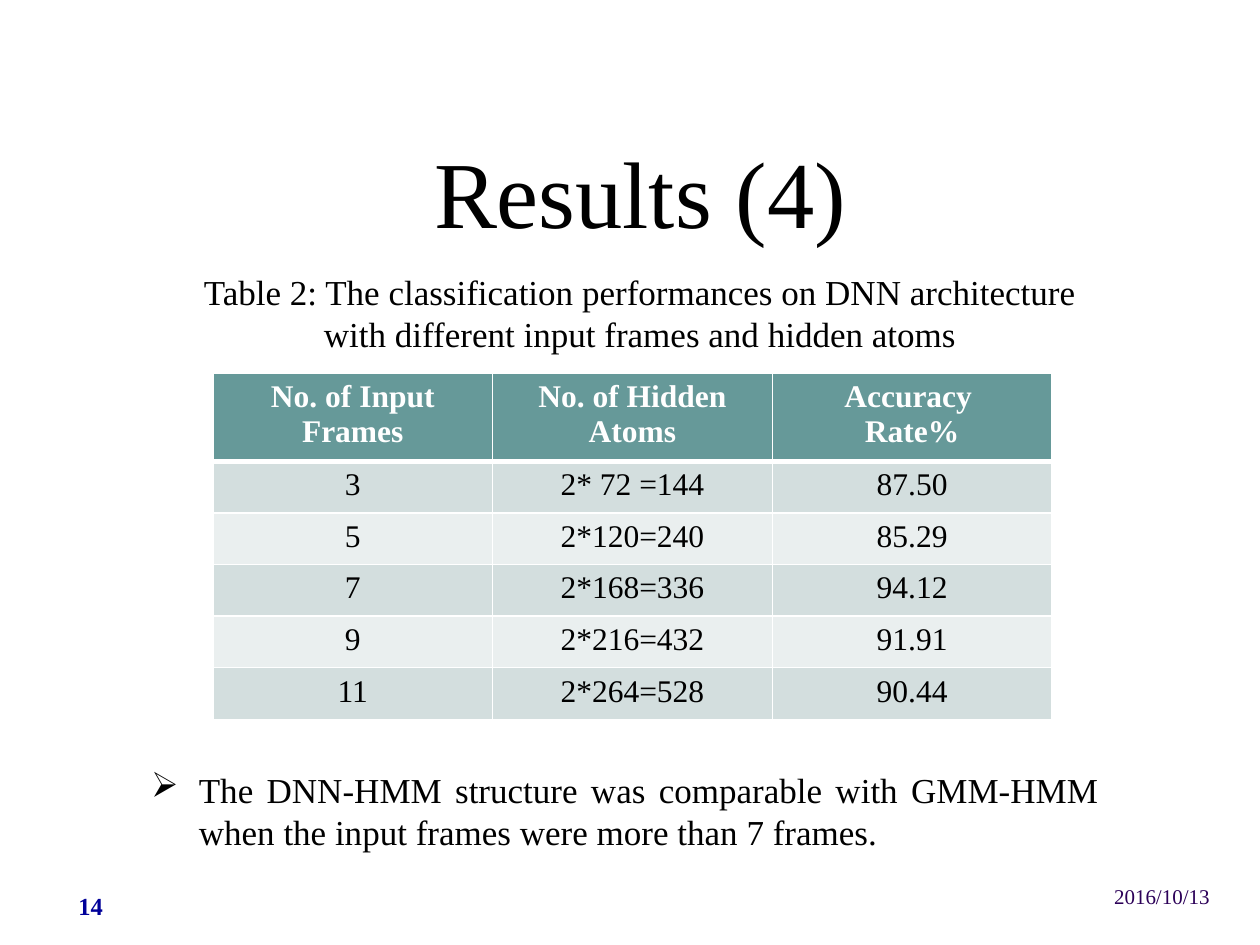
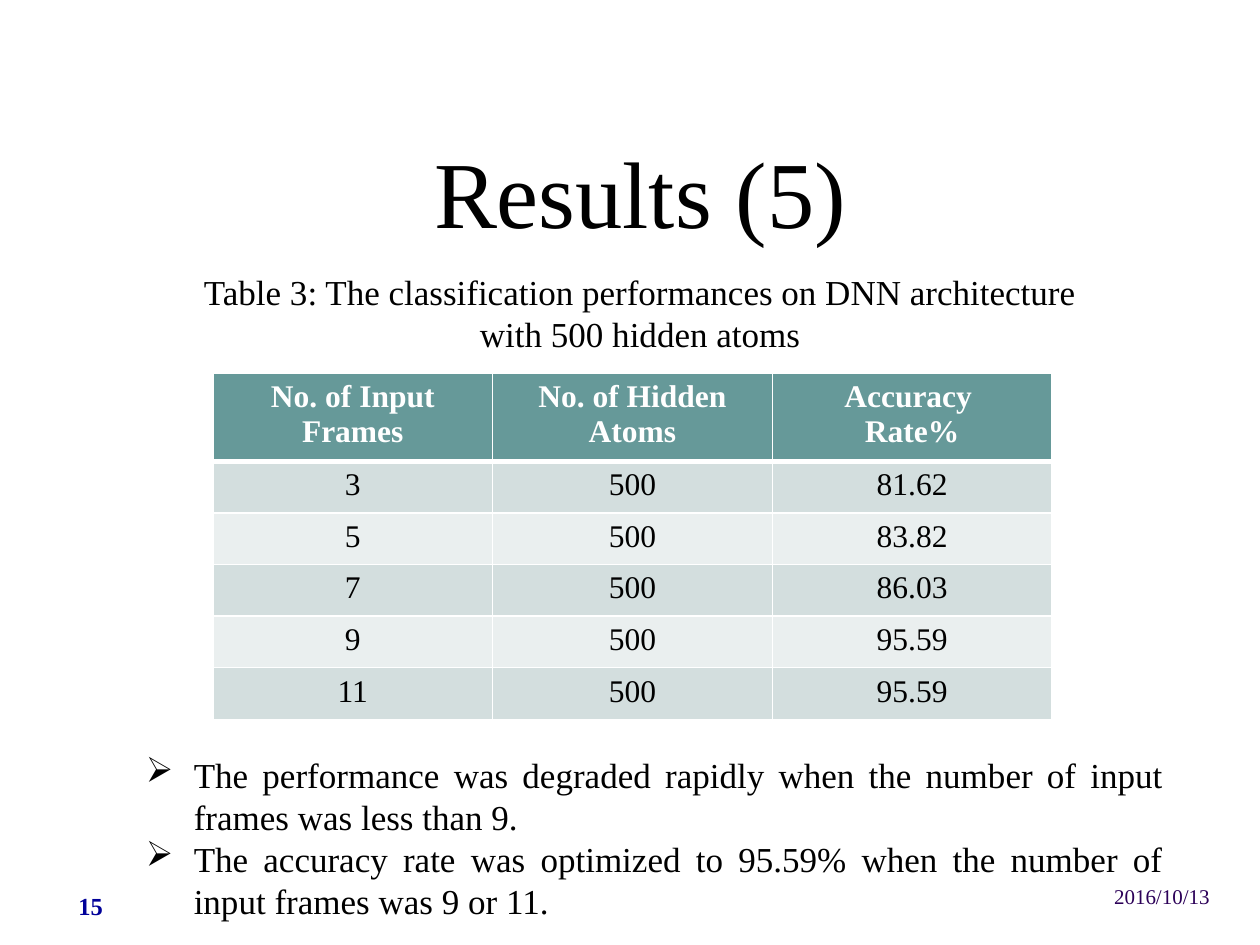
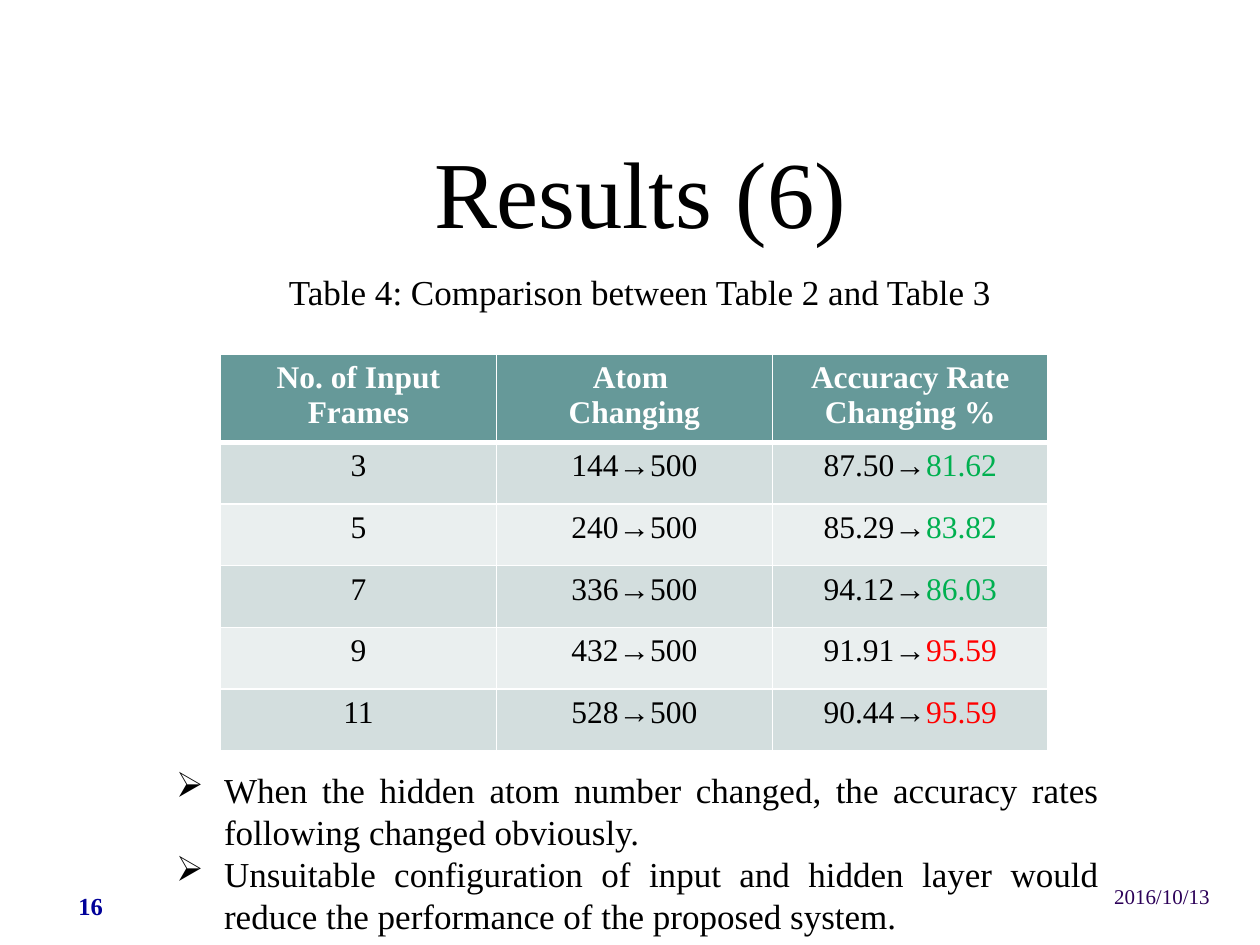
from lxml import etree
from pptx import Presentation
from pptx.dml.color import RGBColor
from pptx.enum.text import MSO_ANCHOR, PP_ALIGN
from pptx.oxml.ns import qn
from pptx.util import Inches, Pt

LEFT, MID, RIGHT = PP_ALIGN.LEFT, PP_ALIGN.CENTER, PP_ALIGN.RIGHT
JUST = PP_ALIGN.JUSTIFY
TOP, CENTER, BOTTOM = MSO_ANCHOR.TOP, MSO_ANCHOR.MIDDLE, MSO_ANCHOR.BOTTOM

FONT = "Times New Roman"
BLACK = RGBColor(0x00, 0x00, 0x00)
WHITE = RGBColor(0xFF, 0xFF, 0xFF)
NAVY = RGBColor(0x00, 0x00, 0x99)
PLUM = RGBColor(0x2C, 0x00, 0x58)
TEAL = RGBColor(0x66, 0x99, 0x99)
BANDS = RGBColor(0xD3, 0xDE, 0xDE), RGBColor(0xEA, 0xEF, 0xEF)
GREEN = RGBColor(0x00, 0xB0, 0x50)
RED = RGBColor(0xFF, 0x00, 0x00)

FRAMES = [3, 5, 7, 9, 11]
ATOMS = [144, 240, 336, 432, 528]
SUMS = ["2* 72 =144", "2*120=240", "2*168=336", "2*216=432", "2*264=528"]
SCALED = ["87.50", "85.29", "94.12", "91.91", "90.44"]
FIXED = ["81.62", "83.82", "86.03", "95.59", "95.59"]


def add_run(para, text, size, color=BLACK, bold=False):
    run = para.add_run()
    run.text = text
    font = run.font
    font.name, font.size, font.bold = FONT, Pt(size), bold
    font.color.rgb = color


def fill_text(frame, lines, size, align, color=BLACK, bold=False):
    for i, line in enumerate(lines):
        para = frame.add_paragraph() if i else frame.paragraphs[0]
        para.alignment = align
        runs = [(line, color)] if isinstance(line, str) else line
        for text, tint in runs:
            add_run(para, text, size, tint, bold)


def add_text(slide, box, lines, size, align=MID, color=BLACK, bold=False,
             anchor=TOP):
    frame = slide.shapes.add_textbox(*map(Inches, box)).text_frame
    frame.word_wrap = True
    frame.vertical_anchor = anchor
    fill_text(frame, lines, size, align, color, bold)
    return frame


def add_body(slide, box, lines, align=MID):
    frame = add_text(slide, box, lines, 20, align)
    for para in frame.paragraphs:
        para.line_spacing = Pt(24)
    return frame


def add_points(slide, box, lines):
    for para in add_body(slide, box, lines, JUST).paragraphs:
        props = para._p.get_or_add_pPr()
        props.set("marL", str(Inches(0.38)))
        props.set("indent", str(-Inches(0.38)))
        etree.SubElement(props, qn("a:buChar")).set("char", "➢")


def add_edges(cell, low):
    props = cell._tc.get_or_add_tcPr()
    widths = {"lnL": 1, "lnR": 1, "lnT": 1, "lnB": low}
    for i, (side, width) in enumerate(widths.items()):
        line = etree.Element(qn("a:" + side), w=str(Pt(width)))
        solid = etree.SubElement(line, qn("a:solidFill"))
        etree.SubElement(solid, qn("a:srgbClr")).set("val", str(WHITE))
        props.insert(i, line)


def add_grid(slide, place, width, head, row, data):
    left, top = place
    rows, cols = len(data), len(data[0])
    high = head + row * (rows - 1)
    grid = slide.shapes.add_table(
        rows, cols, *map(Inches, (left, top, width * cols, high))).table
    for col in grid.columns:
        col.width = Inches(width)
    for r, line in enumerate(data):
        grid.rows[r].height = Inches(row if r else head)
        for c, value in enumerate(line):
            cell = grid.cell(r, c)
            cell.fill.solid()
            cell.fill.fore_color.rgb = BANDS[(r - 1) % 2] if r else TEAL
            add_edges(cell, 1 if r else 3)
            lines = value.split("\n") if isinstance(value, str) else [value]
            fill_text(cell.text_frame, lines, 18, MID,
                      BLACK if r else WHITE, not r)


def add_page(deck, page, title, table, note):
    slide = deck.slides.add_slide(deck.slide_layouts[6])
    add_text(slide, (0.07, 7.01, 1.3, 0.36), [str(page)], 14,
             color=NAVY, bold=True, anchor=CENTER)
    add_grid(slide, *table)
    add_body(slide, (1.34, 2.1, 7.48, 0.77), note)
    add_text(slide, (8.23, 6.96, 1.47, 0.41), ["2016/10/13"], 12,
             RIGHT, PLUM)
    add_text(slide, (0.83, 1, 8.5, 1.01), [title], 54, anchor=BOTTOM)
    return slide


def make_rows(heads, *cols):
    return [heads, *zip(map(str, FRAMES), *cols)]


def main():
    deck = Presentation()
    deck.slide_width, deck.slide_height = Inches(10), Inches(7.5)
    heads = ["No. of Input Frames", "No. of Hidden Atoms", "Accuracy \nRate%"]
    place = 1.69, 2.96

    slide = add_page(
        deck, 14, "Results (4)",
        (place, 2.22, 0.64, 0.41, make_rows(heads, SUMS, SCALED)),
        ["Table 2: The classification performances on DNN architecture",
         "with different input frames and hidden atoms"])
    add_points(slide, (1.1, 6.05, 7.72, 1.11), [
        "The DNN-HMM structure was comparable with GMM-HMM when the input "
        "frames were more than 7 frames."])

    slide = add_page(
        deck, 15, "Results (5)",
        (place, 2.22, 0.69, 0.41,
         make_rows(heads, ["500"] * len(FRAMES), FIXED)),
        ["Table 3: The classification performances on DNN architecture "
         "with 500 hidden atoms"])
    add_points(slide, (1.06, 5.93, 8.27, 1.45), [
        "The performance was degraded rapidly when the number of input "
        "frames was less than 9.",
        "The accuracy rate was optimized to 95.59% when the number of input "
        "frames was 9 or 11."])

    heads = ["No. of Input Frames", "Atom \nChanging",
             "Accuracy Rate Changing %"]
    moves = [f"{count}→500" for count in ATOMS]
    rates = [[(old + "→", BLACK),
              (new, RED if float(new) > float(old) else GREEN)]
             for old, new in zip(SCALED, FIXED)]
    slide = add_page(
        deck, 16, "Results (6)",
        ((1.75, 2.81), 2.19, 0.65, 0.49, make_rows(heads, moves, rates)),
        ["Table 4: Comparison between Table 2 and Table 3"])
    add_points(slide, (1.3, 6.05, 7.52, 1.45), [
        "When the hidden atom number changed, the accuracy rates following "
        "changed obviously.",
        "Unsuitable configuration of input and hidden layer would reduce "
        "the performance of the proposed system."])

    deck.save("out.pptx")


if __name__ == "__main__":
    main()
